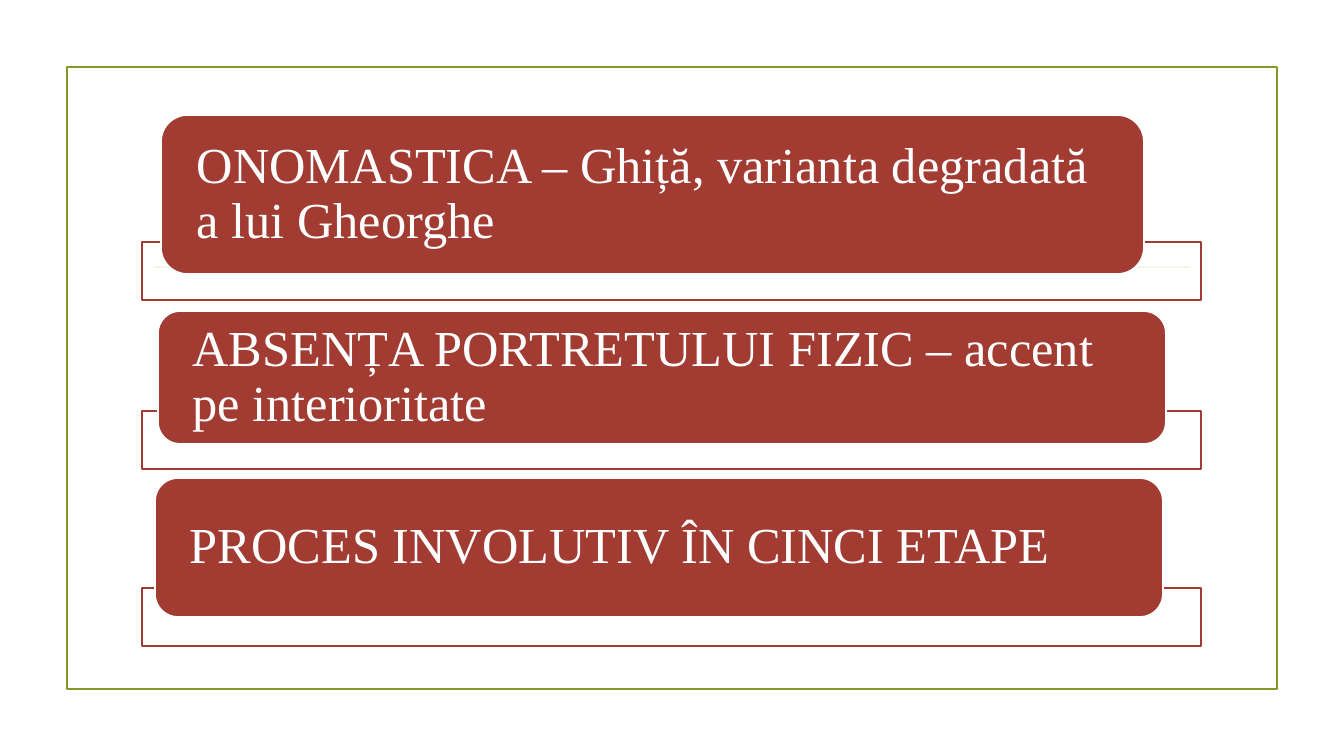
import lxml.etree
import pptx
import pptx.util
import pptx.dml.color
import pptx.enum.shapes
import pptx.enum.text
import pptx.oxml.ns

PX = 914400 / 100.8
GREEN = pptx.dml.color.RGBColor(0x83, 0x99, 0x2A)
RED = pptx.dml.color.RGBColor(0xA2, 0x3C, 0x33)
WHITE = pptx.dml.color.RGBColor(0xFF, 0xFF, 0xFF)
LINE_WIDTH = pptx.util.Pt(1.25)
SHAPES = pptx.enum.shapes.MSO_SHAPE


def px(length):
    return pptx.util.Emu(round(length * PX))


def add_box(kind, left, top, width, height, fill, line):
    shape = slide.shapes.add_shape(kind, px(left), px(top), px(width), px(height))
    shape.shadow.inherit = False
    if fill is None:
        shape.fill.background()
    else:
        shape.fill.solid()
        shape.fill.fore_color.rgb = fill
    shape.line.color.rgb = line
    shape.line.width = LINE_WIDTH
    return shape


presentation = pptx.Presentation()
presentation.slide_width = px(1344)
presentation.slide_height = px(756)
slide = presentation.slides.add_slide(presentation.slide_layouts[6])

add_box(SHAPES.RECTANGLE, 67, 67, 1210, 622, None, GREEN)

divider = slide.shapes.add_connector(
    pptx.enum.shapes.MSO_CONNECTOR.STRAIGHT, px(154), px(267), px(1190), px(267))
divider.line.color.rgb = GREEN
divider.line.width = LINE_WIDTH
lxml.etree.SubElement(divider._element.spPr, pptx.oxml.ns.qn("a:effectLst"))

items = [
    ("ONOMASTICA – Ghiță, varianta degradată a lui Gheorghe", 242, 161, 115, 983, 159),
    ("ABSENȚA PORTRETULUI FIZIC – accent pe interioritate", 411, 158, 311, 1008, 133),
    ("PROCES INVOLUTIV ÎN CINCI ETAPE", 588, 155, 478, 1008, 139),
]

for text, tray_top, left, top, width, height in items:
    tray = add_box(SHAPES.RECTANGLE, 142, tray_top, 1059, 58, WHITE, RED)
    tray_color = tray._element.spPr.find(
        pptx.oxml.ns.qn("a:solidFill")).find(pptx.oxml.ns.qn("a:srgbClr"))
    lxml.etree.SubElement(tray_color, pptx.oxml.ns.qn("a:alpha"), val="90000")

    label = add_box(SHAPES.ROUNDED_RECTANGLE, left, top, width, height, RED, WHITE)
    frame = label.text_frame
    frame.word_wrap = True
    frame.vertical_anchor = pptx.enum.text.MSO_ANCHOR.MIDDLE
    frame.margin_left = frame.margin_right = px(28)
    frame.margin_top = frame.margin_bottom = 0
    paragraph = frame.paragraphs[0]
    paragraph.text = text
    paragraph.alignment = pptx.enum.text.PP_ALIGN.LEFT
    paragraph.line_spacing = 0.9
    paragraph.font.name = "Times New Roman"
    paragraph.font.size = pptx.util.Pt(36)
    paragraph.font.color.rgb = WHITE

presentation.save("out.pptx")
